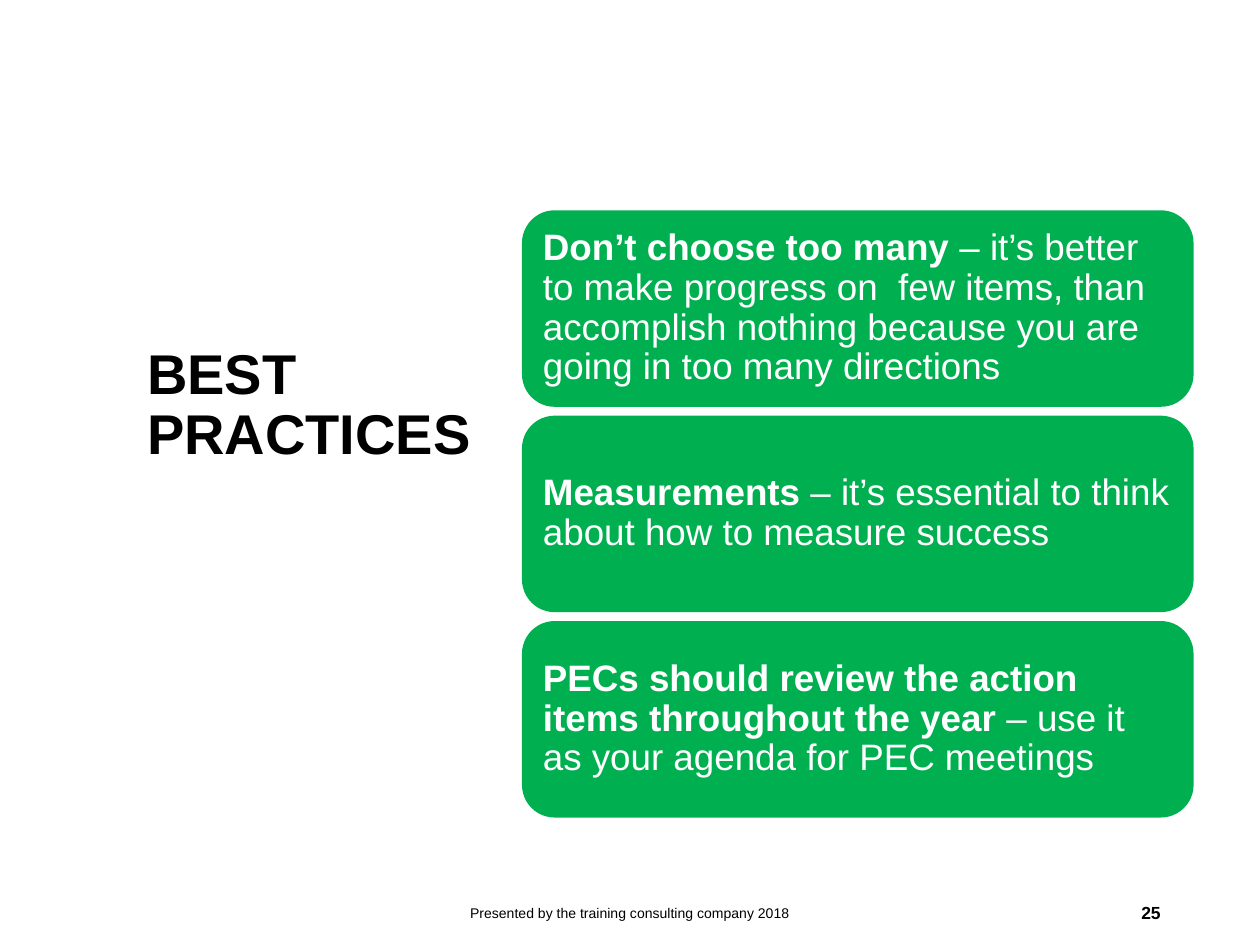
"""Build the Best Practices slide with three stacked practice cards."""
from pptx import Presentation
from pptx.dml.color import RGBColor
from pptx.enum.shapes import MSO_SHAPE
from pptx.enum.text import MSO_ANCHOR, PP_ALIGN
from pptx.util import Pt

ROUNDED = MSO_SHAPE.ROUNDED_RECTANGLE
MIDDLE = MSO_ANCHOR.MIDDLE
LEFT, CENTER, RIGHT = PP_ALIGN.LEFT, PP_ALIGN.CENTER, PP_ALIGN.RIGHT

COLORS = {"black": "000000", "white": "FFFFFF", "green": "00B050"}
FONT = "Arial"
TITLE = "BEST PRACTICES"
PRACTICES = [
    ("Don’t choose too many ",
     "– it’s better to make progress on  few items, than accomplish nothing "
     "because you are going in too many directions"),
    ("Measurements", " – it’s essential to think about how to measure success"),
    ("PECs should review the action items throughout the year ",
     "– use it as your agenda for PEC meetings"),
]
FOOTER = "Presented by the training consulting company 2018"
PAGE_NUMBER = "25"

CARD_LEFT, CARD_TOP, CARD_WIDTH, CARD_HEIGHT = 298.3, 120.2, 383.8, 112.3
CARD_GAP = 5.05
CARD_INSET = 6.5


def write_text(box, *runs, size, color="black", align=LEFT, line_spacing=None):
    """Fill a box with one paragraph made of (text, bold) runs."""
    frame = box.text_frame
    frame.word_wrap = True
    frame.vertical_anchor = MIDDLE
    para = frame.paragraphs[0]
    para.alignment = align
    para.line_spacing = line_spacing
    for text, bold in runs:
        span = para.add_run()
        span.text = text
        span.font.name = FONT
        span.font.size = Pt(size)
        span.font.bold = bold
        span.font.color.rgb = RGBColor.from_string(COLORS[color])


def add_text_box(page, bounds, text, bold=False, **text_format):
    """Place a text box at the given bounds in points."""
    box = page.shapes.add_textbox(*map(Pt, bounds))
    write_text(box, (text, bold), **text_format)


def add_card(page, top, lead, detail):
    """Place a rounded practice card with a bold lead."""
    card = page.shapes.add_shape(
        ROUNDED, Pt(CARD_LEFT), Pt(top), Pt(CARD_WIDTH), Pt(CARD_HEIGHT))
    card.shadow.inherit = False
    card.fill.solid()
    card.fill.fore_color.rgb = RGBColor.from_string(COLORS["green"])
    card.line.fill.background()
    frame = card.text_frame
    frame.margin_left = frame.margin_right = Pt(CARD_INSET)
    frame.margin_top = frame.margin_bottom = Pt(CARD_INSET)
    write_text(card, (lead, True), (detail, False),
               size=21, color="white", line_spacing=0.9)


def main():
    """Assemble and save the deck."""
    deck = Presentation()
    deck.slide_width, deck.slide_height = Pt(720), Pt(540)
    page = deck.slides.add_slide(deck.slide_layouts[6])
    add_text_box(page, (77, 170.6, 208, 123), TITLE,
                 bold=True, size=32, line_spacing=0.9)
    for index, (lead, detail) in enumerate(PRACTICES):
        add_card(page, CARD_TOP + index * (CARD_HEIGHT + CARD_GAP), lead, detail)
    add_text_box(page, (238.3, 507, 243.4, 28.8), FOOTER, size=8, align=CENTER)
    add_text_box(page, (508.3, 507, 162, 28.8), PAGE_NUMBER,
                 bold=True, size=10, align=RIGHT)
    deck.save("out.pptx")


if __name__ == "__main__":
    main()
